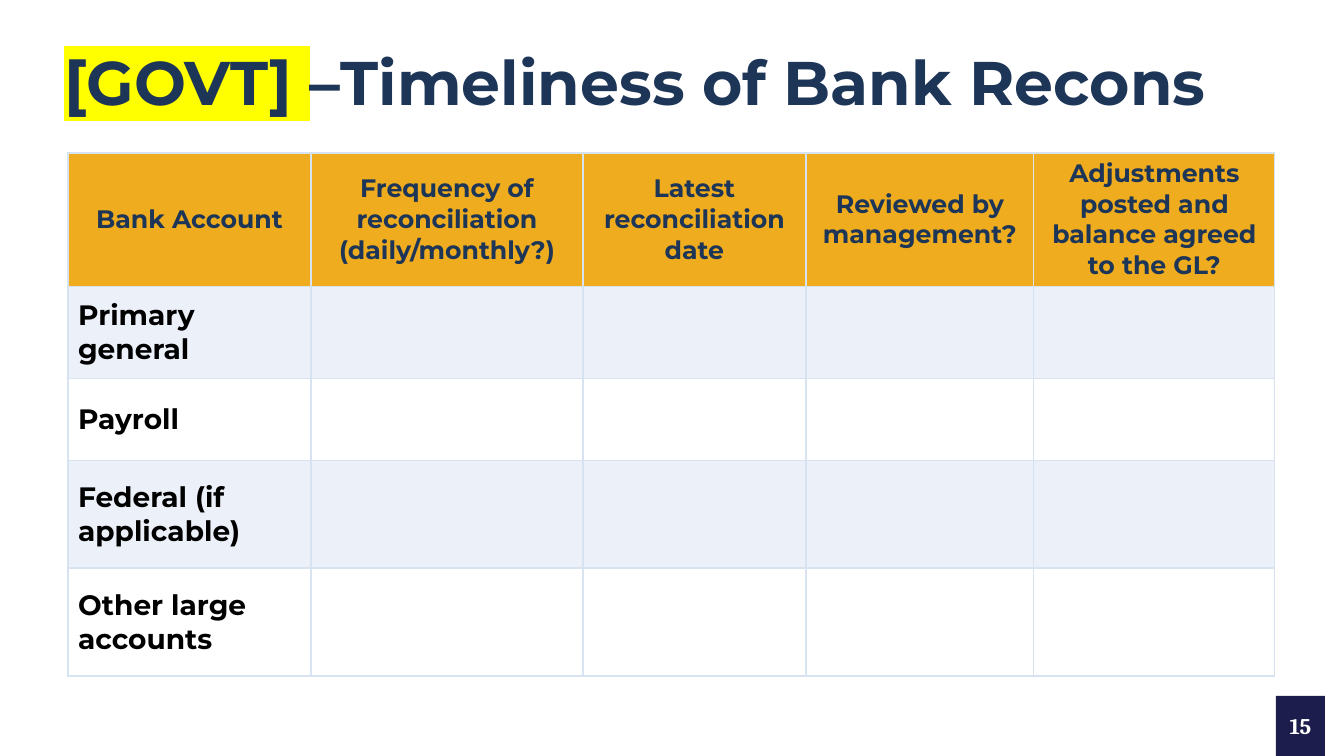
"""Build the bank reconciliation timeliness slide."""
import pptx
import pptx.util
import pptx.dml.color
import pptx.enum.shapes
import pptx.enum.text
import pptx.oxml
import pptx.oxml.ns

TITLE = ["[GOVT] ", "–Timeliness of Bank Recons"]
HEADS = [
    "Bank Account",
    "Frequency of reconciliation (daily/monthly?)",
    "Latest reconciliation date",
    "Reviewed by management?",
    "Adjustments posted and balance agreed to the GL?",
]
BANKS = ["Primary general", "Payroll", "Federal (if applicable)", "Other large accounts"]
PAGE = "15"

COLS = [243, 272, 223, 228, 241]
ROWS = [133, 92, 82, 108, 108]
HUES = {
    "navy": "1D3557", "mark": "FFFF00", "gold": "EEAC1E", "pale": "ECF1F9",
    "white": "FFFFFF", "black": "000000", "rule": "D8E3F2", "badge": "1C1D4C",
}
FONT = "Montserrat"
ALIGN = pptx.enum.text.PP_ALIGN
MIDDLE = pptx.enum.text.MSO_ANCHOR.MIDDLE


def px(num):
    return round(num * 914400 / 100.8)


def hue(name):
    return pptx.dml.color.RGBColor.from_string(HUES[name])


def paint(fill, name):
    fill.solid()
    fill.fore_color.rgb = hue(name)


def style(run, size, name, face=FONT):
    run.font.size = pptx.util.Pt(size)
    run.font.bold = True
    run.font.color.rgb = hue(name)
    run.font.name = face


def node(xml):
    return pptx.oxml.parse_xml(xml.replace(">", f" {pptx.oxml.ns.nsdecls('a')}>", 1))


def border(cell):
    props = cell._tc.get_or_add_tcPr()
    for spot, side in enumerate("LRTB"):
        props.insert(spot, node(
            f'<a:ln{side} w="12700"><a:solidFill><a:srgbClr val="{HUES["rule"]}"/>'
            f'</a:solidFill></a:ln{side}>'))


def add_title(slide):
    title = slide.shapes.title
    title.left, title.top, title.width, title.height = map(px, (54, 33, 1209, 106))
    frame = title.text_frame
    frame.word_wrap = True
    frame.auto_size = pptx.enum.text.MSO_AUTO_SIZE.NONE
    frame.vertical_anchor = MIDDLE
    line = frame.paragraphs[0]
    line.alignment = ALIGN.LEFT
    line.line_spacing = 0.9
    for text in TITLE:
        run = line.add_run()
        run.text = text
        style(run, 44, "navy")
    props = line.runs[0]._r.get_or_add_rPr()
    props.insert(1, node(
        f'<a:highlight><a:srgbClr val="{HUES["mark"]}"/></a:highlight>'))


def add_grid(slide):
    rows = [HEADS] + [[bank] + [""] * (len(COLS) - 1) for bank in BANKS]
    grid = slide.shapes.add_table(
        len(rows), len(COLS), px(68), px(153), px(sum(COLS)), px(sum(ROWS))).table
    for col, wide in zip(grid.columns, COLS):
        col.width = px(wide)
    for row, (high, texts) in enumerate(zip(ROWS, rows)):
        grid.rows[row].height = px(high)
        head = row == 0
        back = "gold" if head else ("pale" if row % 2 else "white")
        for col, text in enumerate(texts):
            cell = grid.cell(row, col)
            paint(cell.fill, back)
            border(cell)
            cell.vertical_anchor = MIDDLE
            if text:
                cell.text_frame.text = text
                line = cell.text_frame.paragraphs[0]
                line.alignment = ALIGN.CENTER if head else ALIGN.LEFT
                style(line.runs[0], 18 if head else 20, "navy" if head else "black")


def add_badge(slide):
    badge = slide.shapes.add_shape(
        pptx.enum.shapes.MSO_SHAPE.RECTANGLE, px(1276), px(696), px(49), px(60))
    badge.shadow.inherit = False
    paint(badge.fill, "badge")
    badge.line.fill.background()
    frame = badge.text_frame
    frame.margin_left = frame.margin_right = 0
    frame.vertical_anchor = MIDDLE
    frame.text = PAGE
    line = frame.paragraphs[0]
    line.alignment = ALIGN.CENTER
    style(line.runs[0], 16, "white", "Cambria")


def main():
    deck = pptx.Presentation()
    deck.slide_width, deck.slide_height = px(1344), px(756)
    slide = deck.slides.add_slide(deck.slide_layouts[5])
    paint(slide.background.fill, "white")
    add_title(slide)
    add_grid(slide)
    add_badge(slide)
    deck.save("out.pptx")


if __name__ == "__main__":
    main()
